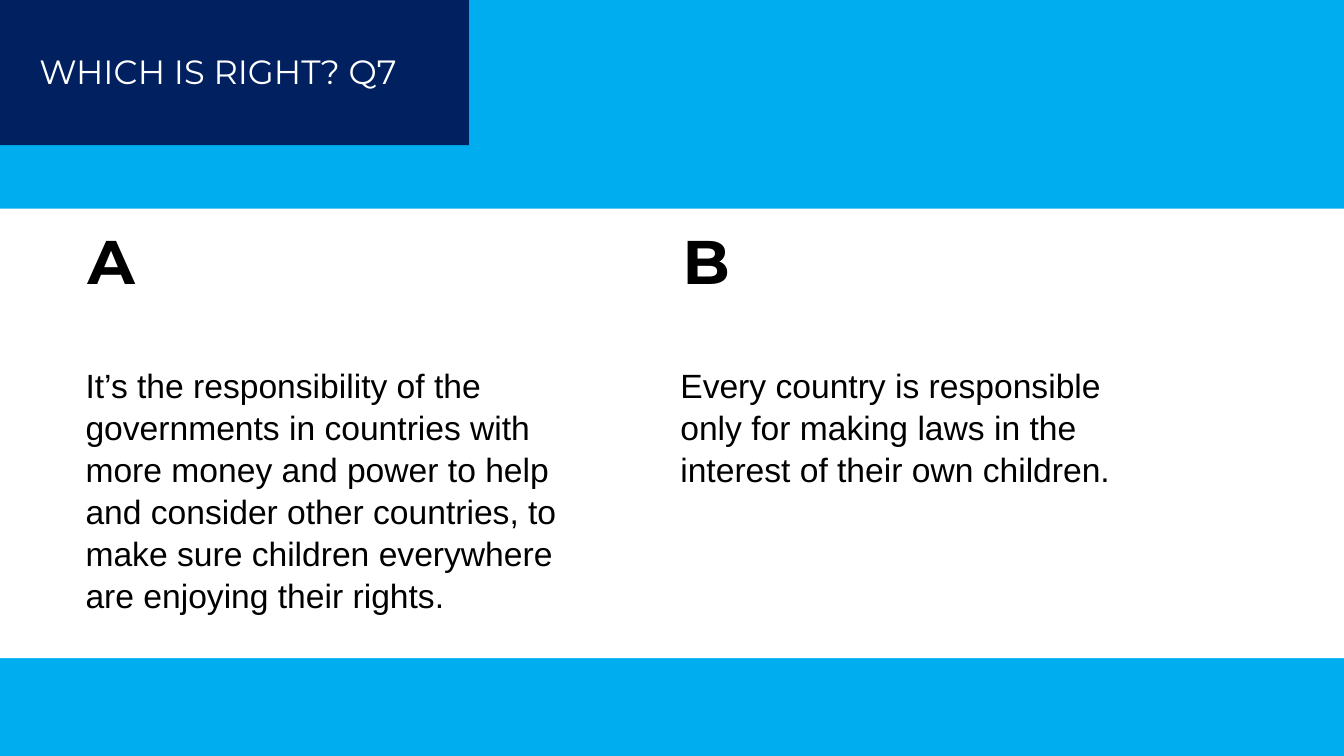
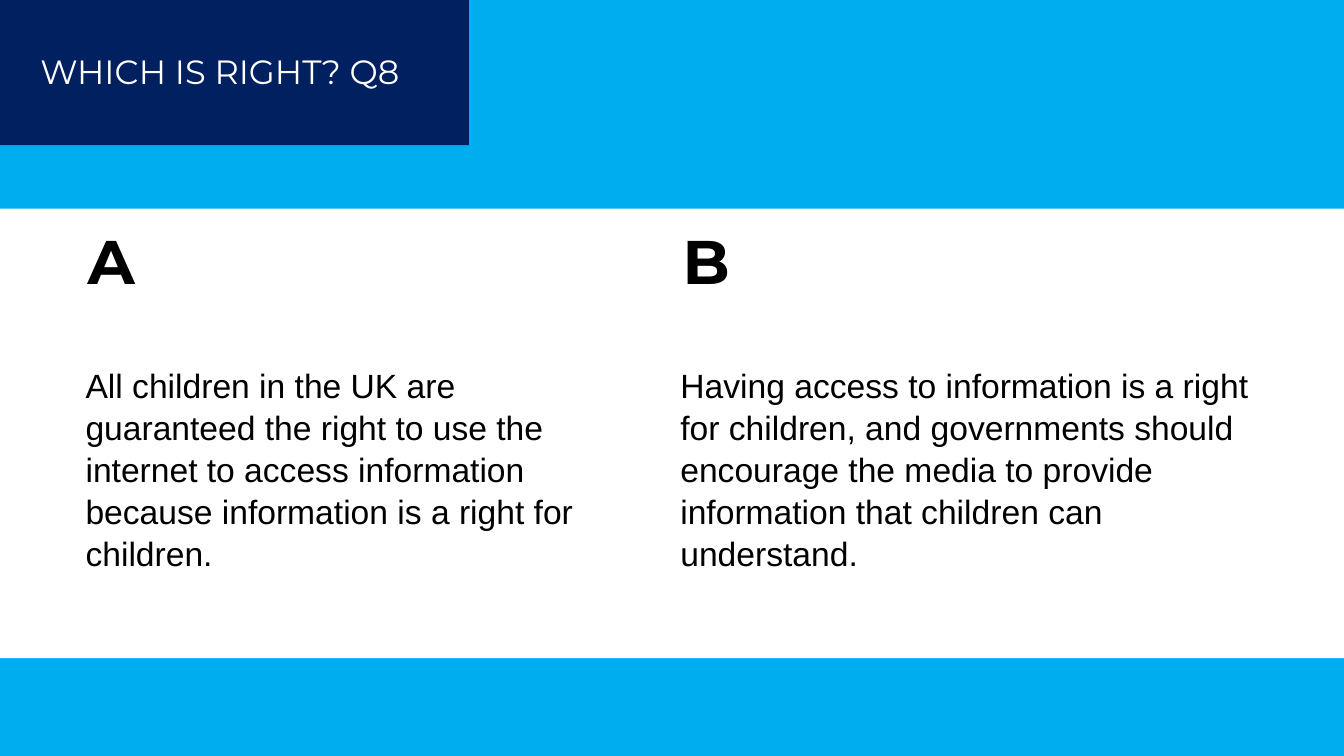
import pptx
import pptx.util
from pptx.dml.color import RGBColor
from pptx.enum.shapes import MSO_SHAPE
from pptx.enum.text import MSO_ANCHOR, MSO_AUTO_SIZE, PP_ALIGN

SKY = RGBColor(0x00, 0xAE, 0xEF)
NAVY = RGBColor(0x00, 0x20, 0x60)
WHITE = RGBColor(0xFF, 0xFF, 0xFF)
BLACK = RGBColor(0x00, 0x00, 0x00)
HEAD, BODY = "Montserrat", "Arial"

WIDE, HIGH = 13.33, 7.5
BANDS = [((0, 2.07, WIDE, 4.46), WHITE), ((0, 0, 4.65, 1.44), NAVY)]
LEFTS = (0.75, 6.65)
ROWS = (2.09, 3.56)

# Title, title left, then (answer, width) for each column
SLIDES = [
    ("WHICH IS RIGHT? Q7", 0.29, [
        ("It’s the responsibility of the governments in countries with more "
         "money and power to help and consider other countries, to make sure "
         "children everywhere are enjoying their rights.", 5.29),
        ("Every country is responsible only for making laws in the interest "
         "of their own children.", 5.06),
    ]),
    ("WHICH IS RIGHT? Q8", 0.3, [
        ("All children in the UK are guaranteed the right to use the internet "
         "to access information because information is a right for children.",
         5.51),
        ("Having access to information is a right for children, and "
         "governments should encourage the media to provide information that "
         "children can understand.", 5.83),
    ]),
]


def place(shape, box):
    shape.left, shape.top, shape.width, shape.height = map(
        pptx.util.Inches, box)


def write(shape, text, font=BODY, size=24, color=BLACK, bold=False,
          pad=(0.1, 0.05), space=1.0):
    """Fill a shape with one left-aligned paragraph; pad is (side, top)."""
    frame = shape.text_frame
    frame.word_wrap = True
    frame.auto_size = MSO_AUTO_SIZE.NONE
    frame.vertical_anchor = MSO_ANCHOR.TOP
    frame.margin_left = frame.margin_right = pptx.util.Inches(pad[0])
    frame.margin_top = frame.margin_bottom = pptx.util.Inches(pad[1])
    para = frame.paragraphs[0]
    para.alignment = PP_ALIGN.LEFT
    para.line_spacing = space
    run = para.add_run()
    run.text = text
    run.font.name, run.font.size = font, pptx.util.Pt(size)
    run.font.bold, run.font.color.rgb = bold, color


def add_text(slide, box, text, **form):
    shape = slide.shapes.add_textbox(*map(pptx.util.Inches, box))
    write(shape, text, **form)


def add_band(slide, box, color):
    band = slide.shapes.add_shape(
        MSO_SHAPE.RECTANGLE, *map(pptx.util.Inches, box))
    band.shadow.inherit = False
    band.fill.solid()
    band.fill.fore_color.rgb = color
    band.line.fill.background()


def add_slide(deck, title, left, answers):
    slide = deck.slides.add_slide(deck.slide_layouts[5])
    for box, color in BANDS:
        add_band(slide, box, color)

    head = slide.shapes.title
    head.element.getparent().append(head.element)  # bring above the bands
    place(head, (left, 0.45, 4.13, 0.5))
    write(head, title, font=HEAD, color=WHITE)

    for letter, x, (answer, width) in zip("AB", LEFTS, answers):
        add_text(slide, (x, ROWS[0], 0.74, 0.98), letter, font=HEAD,
                 size=44, bold=True, pad=(0.12, 0.12))
        add_text(slide, (x, ROWS[1], width, 2.52), answer, space=1.04)


def main():
    deck = pptx.Presentation()
    deck.slide_width = pptx.util.Inches(WIDE)
    deck.slide_height = pptx.util.Inches(HIGH)
    back = deck.slide_master.background.fill
    back.solid()
    back.fore_color.rgb = SKY
    for item in SLIDES:
        add_slide(deck, *item)
    deck.save("out.pptx")


if __name__ == "__main__":
    main()
